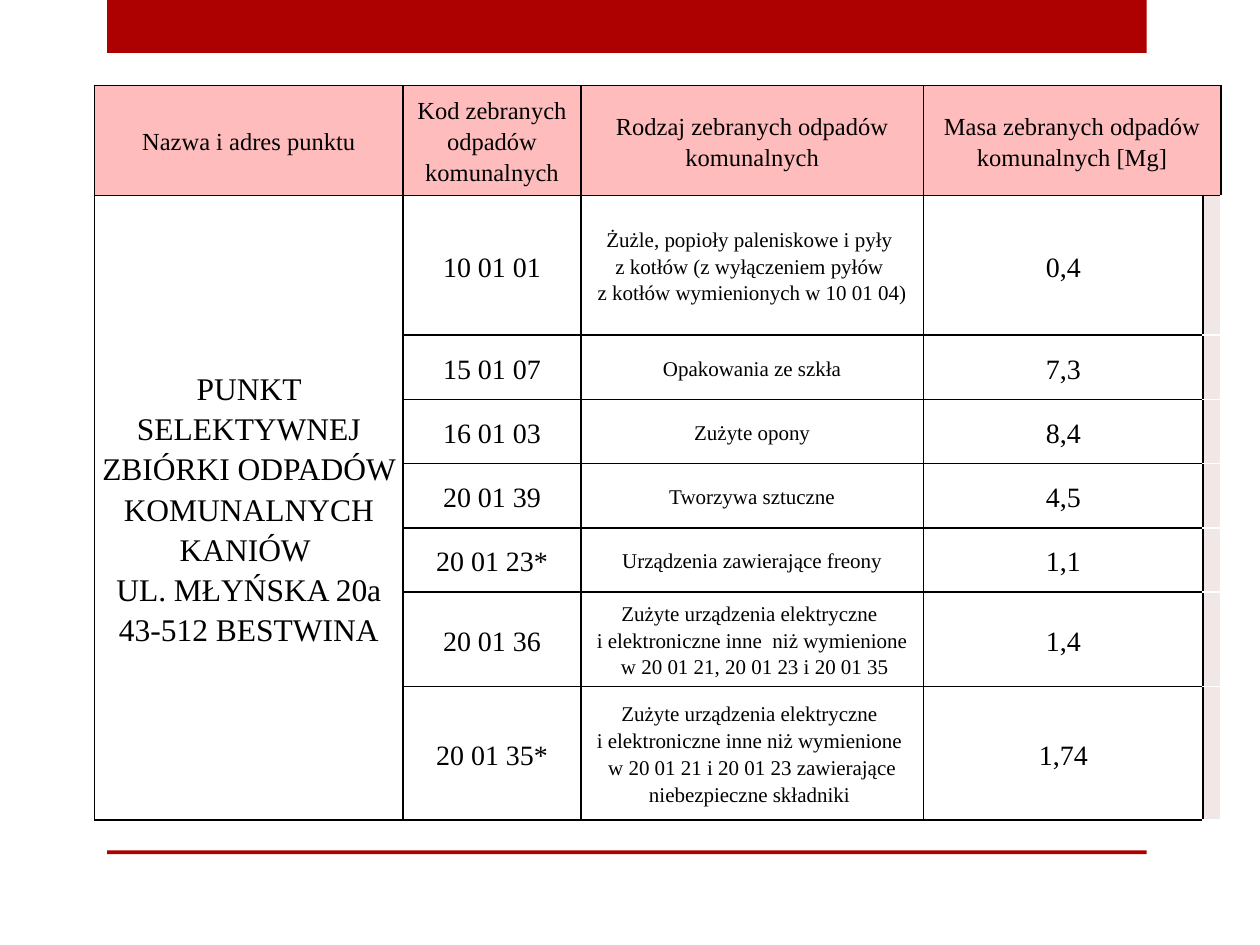
"""Build a slide with a table of waste collected at a municipal collection point."""
from dataclasses import dataclass

from lxml import etree
from pptx import Presentation
from pptx.dml.color import RGBColor
from pptx.enum.shapes import MSO_SHAPE
from pptx.enum.text import MSO_ANCHOR, PP_ALIGN
from pptx.oxml.ns import qn
from pptx.util import Emu, Inches, Pt

RECT = MSO_SHAPE.RECTANGLE
MIDDLE = MSO_ANCHOR.MIDDLE
CENTER = PP_ALIGN.CENTER
FONT = "Times New Roman"
COLORS = {"bar": "AD0101", "header": "FFBCBC", "strip": "F1E7E7",
          "ink": "000000", "paper": "FFFFFF"}
HEADER_SIZE, SITE_SIZE, VALUE_SIZE, KIND_SIZE = 14, 18, 16, 12
COL_SHARES = [24.5, 14.1, 27.2, 22.2, 1]
ROW_SHARES = [11.6, 14.8, 6.8, 6.8, 6.8, 6.8, 10, 14.13]


@dataclass
class Bar:
    left: float
    top: float
    width: float
    height: float


@dataclass
class Waste:
    code: str
    kind: str
    mass: str


BARS = [Bar(8.5, 0, 82.5, 5.6), Bar(8.5, 90, 82.5, 0.4)]
HEADERS = ["Nazwa i adres punktu", "Kod zebranych odpadów komunalnych",
           "Rodzaj zebranych odpadów komunalnych",
           "Masa zebranych odpadów komunalnych [Mg]"]
SITE = ["PUNKT SELEKTYWNEJ ZBIÓRKI ODPADÓW KOMUNALNYCH KANIÓW \nUL. MŁYŃSKA 20a",
        "43-512 BESTWINA"]
WASTES = [
    Waste("10 01 01", "Żużle, popioły paleniskowe i pyły \nz kotłów (z wyłączeniem pyłów \n"
          "z kotłów wymienionych w 10 01 04)", "0,4"),
    Waste("15 01 07", "Opakowania ze szkła", "7,3"),
    Waste("16 01 03", "Zużyte opony", "8,4"),
    Waste("20 01 39", "Tworzywa sztuczne", "4,5"),
    Waste("20 01 23*", "Urządzenia zawierające freony", "1,1"),
    Waste("20 01 36", "Zużyte urządzenia elektryczne \ni elektroniczne inne  niż wymienione\n"
          " w 20 01 21, 20 01 23 i 20 01 35", "1,4"),
    Waste("20 01 35*", "Zużyte urządzenia elektryczne \ni elektroniczne inne niż wymienione \n"
          "w 20 01 21 i 20 01 23 zawierające niebezpieczne składniki ", "1,74"),
]

prs = Presentation()
prs.slide_width, prs.slide_height = Inches(10), Inches(7.5)


def across(share: float) -> Emu:
    return Emu(round(prs.slide_width * share / 100))


def down(share: float) -> Emu:
    return Emu(round(prs.slide_height * share / 100))


def rgb(name: str) -> RGBColor:
    return RGBColor.from_string(COLORS[name])


def draw_bar(s, bar: Bar) -> None:
    sp = s.shapes.add_shape(RECT, across(bar.left), down(bar.top),
                            across(bar.width), down(bar.height))
    sp.shadow.inherit = False
    sp.fill.solid()
    sp.fill.fore_color.rgb = rgb("bar")
    sp.line.fill.background()


def set_borders(cell, left: str, right: str, top: str, bottom: str) -> None:
    tc_pr = cell._tc.get_or_add_tcPr()
    for i, (side, color) in enumerate(zip("LRTB", (left, right, top, bottom))):
        ln = etree.Element(qn(f"a:ln{side}"), w=str(Pt(1)))
        fill = etree.SubElement(ln, qn("a:solidFill"))
        etree.SubElement(fill, qn("a:srgbClr"), val=COLORS[color])
        tc_pr.insert(i, ln)


def style_cell(cell, row: int, col: int) -> None:
    cell.margin_left = cell.margin_right = Inches(0.05)
    cell.margin_top = cell.margin_bottom = 0
    cell.vertical_anchor = MIDDLE
    strip = row > 0 and col == len(COL_SHARES) - 1
    if row == 0 or strip:
        cell.fill.solid()
        cell.fill.fore_color.rgb = rgb("strip" if strip else "header")
    else:
        cell.fill.background()
    edge = "paper" if strip else "ink"
    set_borders(cell, "ink", edge, "ink" if row == 1 else edge, edge)


def write_cell(cell, paragraphs: list[str], size: int) -> None:
    tf = cell.text_frame
    for i, text in enumerate(paragraphs):
        p = tf.add_paragraph() if i else tf.paragraphs[0]
        p.alignment, p.line_spacing = CENTER, 1.15
        for j, line in enumerate(text.split("\n")):
            if j:
                p.add_line_break()
            r = p.add_run()
            r.text = line
            r.font.name, r.font.size = FONT, Pt(size)
            r.font.color.rgb = rgb("ink")


def draw_table(s) -> None:
    rows, cols = len(ROW_SHARES), len(COL_SHARES)
    table = s.shapes.add_table(rows, cols, across(7.5), down(9.07),
                               across(sum(COL_SHARES)), down(sum(ROW_SHARES))).table
    table.first_row = table.horz_banding = False
    for column, share in zip(table.columns, COL_SHARES):
        column.width = across(share)
    for table_row, share in zip(table.rows, ROW_SHARES):
        table_row.height = down(share)
    for row in range(rows):
        for col in range(cols):
            style_cell(table.cell(row, col), row, col)
    table.cell(0, cols - 2).merge(table.cell(0, cols - 1))
    table.cell(1, 0).merge(table.cell(rows - 1, 0))
    for col, header in enumerate(HEADERS):
        write_cell(table.cell(0, col), [header], HEADER_SIZE)
    write_cell(table.cell(1, 0), SITE, SITE_SIZE)
    for row, waste in enumerate(WASTES, start=1):
        write_cell(table.cell(row, 1), [waste.code], VALUE_SIZE)
        write_cell(table.cell(row, 2), [waste.kind], KIND_SIZE)
        write_cell(table.cell(row, 3), [waste.mass], VALUE_SIZE)


def main() -> None:
    s = prs.slides.add_slide(prs.slide_layouts[6])
    for bar in BARS:
        draw_bar(s, bar)
    draw_table(s)
    prs.save("out.pptx")


if __name__ == "__main__":
    main()
